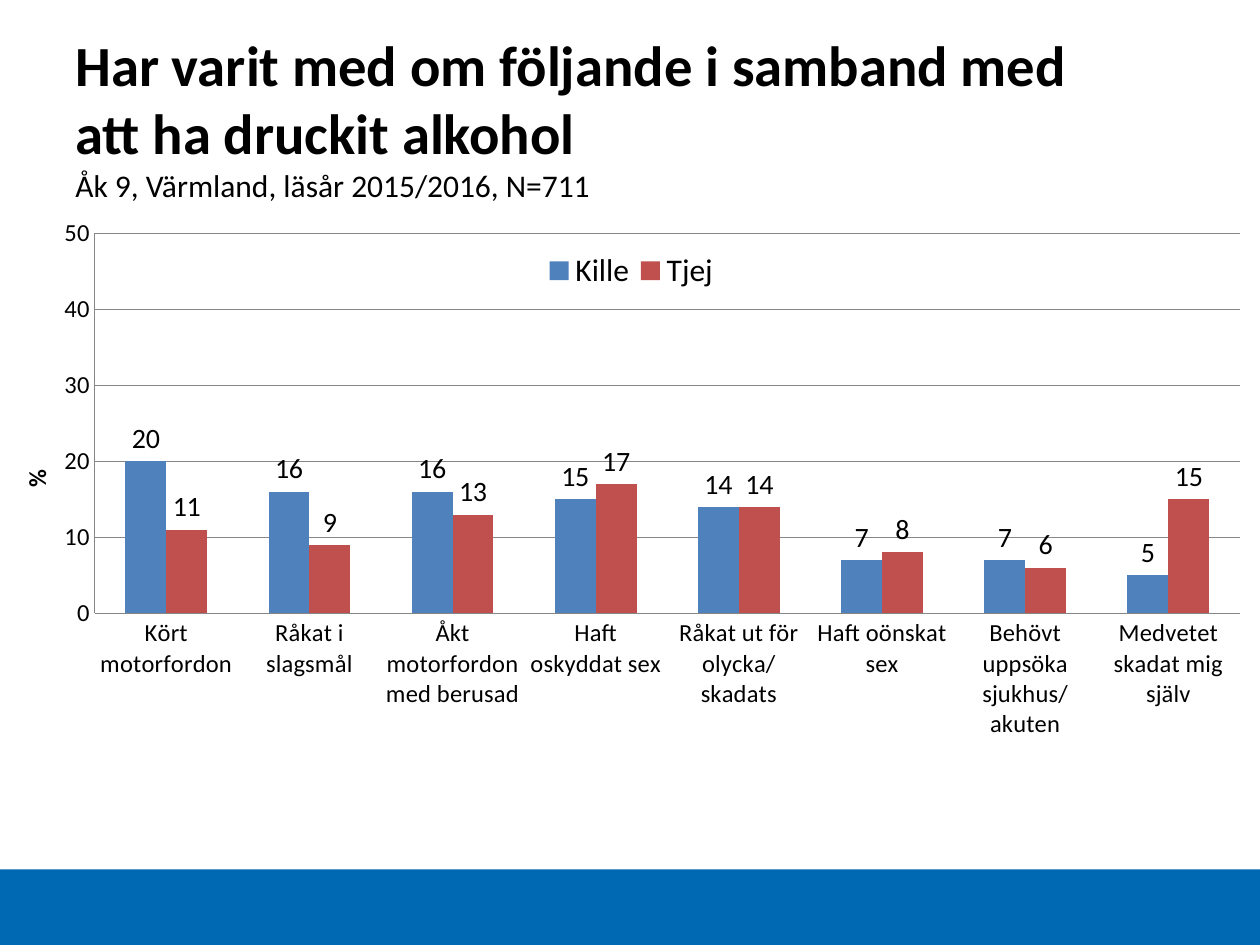
from dataclasses import dataclass

from lxml import etree
from pptx import Presentation
from pptx import util as u
from pptx.chart.data import CategoryChartData
from pptx.dml.color import RGBColor
from pptx.enum import chart as charts, shapes, text
from pptx.oxml.ns import qn


@dataclass(frozen=True)
class Theme:
    font: str = "Calibri"
    ink: str = "000000"
    band: str = "0069B4"
    line: str = "868686"
    boys: str = "4F81BD"
    girls: str = "C0504D"
    title: float = 32.4
    subtitle: float = 18
    legend: float = 18
    value: float = 16
    axis: float = 14


THEME = Theme()
SLIDE_SIZE = (720, 540)

CATEGORIES = [
    "Kört motorfordon",
    "Råkat i slagsmål",
    "Åkt motorfordon med berusad",
    "Haft oskyddat sex",
    "Råkat ut för olycka/skadats",
    "Haft oönskat sex",
    "Behövt uppsöka sjukhus/akuten",
    "Medvetet skadat mig själv",
]
SERIES = [
    ("Kille", [20, 16, 16, 15, 14, 7, 7, 5], THEME.boys),
    ("Tjej", [11, 9, 13, 17, 14, 8, 6, 15], THEME.girls),
]


def points(*lengths):
    return [u.Pt(length) for length in lengths]


def style_font(font, size, bold=False):
    font.name = THEME.font
    font.size = u.Pt(size)
    font.bold = bold
    font.color.rgb = RGBColor.from_string(THEME.ink)


def add_text(paragraph, content, *, size, bold=False):
    run = paragraph.add_run()
    run.text = content
    style_font(run.font, size, bold)


def add_band(slide, box):
    band = slide.shapes.add_shape(shapes.MSO_SHAPE.RECTANGLE, *points(*box))
    band.shadow.inherit = False
    band.fill.solid()
    band.fill.fore_color.rgb = RGBColor.from_string(THEME.band)
    band.line.fill.background()


def add_heading(slide, box, title, subtitle):
    frame = slide.shapes.add_textbox(*points(*box)).text_frame
    frame.word_wrap = True
    frame.vertical_anchor = text.MSO_ANCHOR.MIDDLE
    paragraph = frame.paragraphs[0]
    add_text(paragraph, title, size=THEME.title, bold=True)
    paragraph.add_line_break()
    add_text(paragraph, subtitle, size=THEME.subtitle)


def set_layout(element, index, **settings):
    """Give a chart part a manual layout, in fractions of the chart."""
    for old in element.findall(qn("c:layout")):
        element.remove(old)
    layout = etree.Element(qn("c:layout"))
    manual = etree.SubElement(layout, qn("c:manualLayout"))
    for name, value in settings.items():
        etree.SubElement(manual, qn(f"c:{name}")).set("val", str(value))
    element.insert(index, layout)


def style_axes(chart):
    values, categories = chart.value_axis, chart.category_axis
    values.minimum_scale, values.maximum_scale, values.major_unit = 0, 50, 10
    values.has_major_gridlines = True
    values.has_title = True
    paragraph = values.axis_title.text_frame.paragraphs[0]
    add_text(paragraph, "%", size=THEME.axis, bold=True)
    for axis in (values, categories):
        axis.major_tick_mark = charts.XL_TICK_MARK.NONE
        axis.minor_tick_mark = charts.XL_TICK_MARK.NONE
        style_font(axis.tick_labels.font, THEME.axis)
    for line in (values.format.line, categories.format.line,
                 values.major_gridlines.format.line):
        line.color.rgb = RGBColor.from_string(THEME.line)
        line.width = u.Pt(0.75)


def style_legend(chart):
    chart.has_legend = True
    legend = chart.legend
    legend.position = charts.XL_LEGEND_POSITION.TOP
    legend.include_in_layout = False
    style_font(legend.font, THEME.legend)
    set_layout(legend._element, 1, xMode="edge", yMode="edge",
               x=0.42, y=0.05, w=0.15, h=0.07)


def style_columns(plot):
    plot.gap_width = 150
    plot.overlap = 0
    plot.vary_by_categories = False
    for series, (_, _, color) in zip(plot.series, SERIES):
        series.format.fill.solid()
        series.format.fill.fore_color.rgb = RGBColor.from_string(color)
        labels = series.data_labels
        labels.show_value = True
        labels.position = charts.XL_LABEL_POSITION.OUTSIDE_END
        style_font(labels.font, THEME.value)


def add_column_chart(slide, box):
    data = CategoryChartData()
    data.categories = CATEGORIES
    for name, values, _ in SERIES:
        data.add_series(name, values)
    chart = slide.shapes.add_chart(
        charts.XL_CHART_TYPE.COLUMN_CLUSTERED, *points(*box), data).chart
    chart.has_title = False
    style_font(chart.font, THEME.axis)
    style_axes(chart)
    style_legend(chart)
    style_columns(chart.plots[0])
    plot_area = chart._chartSpace.find(f".//{qn('c:plotArea')}")
    set_layout(plot_area, 0, layoutTarget="inner", xMode="edge", yMode="edge",
               x=0.064, y=0.029, w=0.92, h=0.571)


def main():
    presentation = Presentation()
    presentation.slide_width, presentation.slide_height = points(*SLIDE_SIZE)
    slide = presentation.slides.add_slide(presentation.slide_layouts[6])
    add_band(slide, (0, 496.8, 720, 43.2))
    add_heading(slide, (36, 21.6, 623.5, 90),
                "Har varit med om följande i samband med att ha druckit alkohol",
                "Åk 9, Värmland, läsår 2015/2016, N=711")
    add_column_chart(slide, (8.64, 122.4, 711.36, 380.16))
    presentation.save("out.pptx")


if __name__ == "__main__":
    main()
